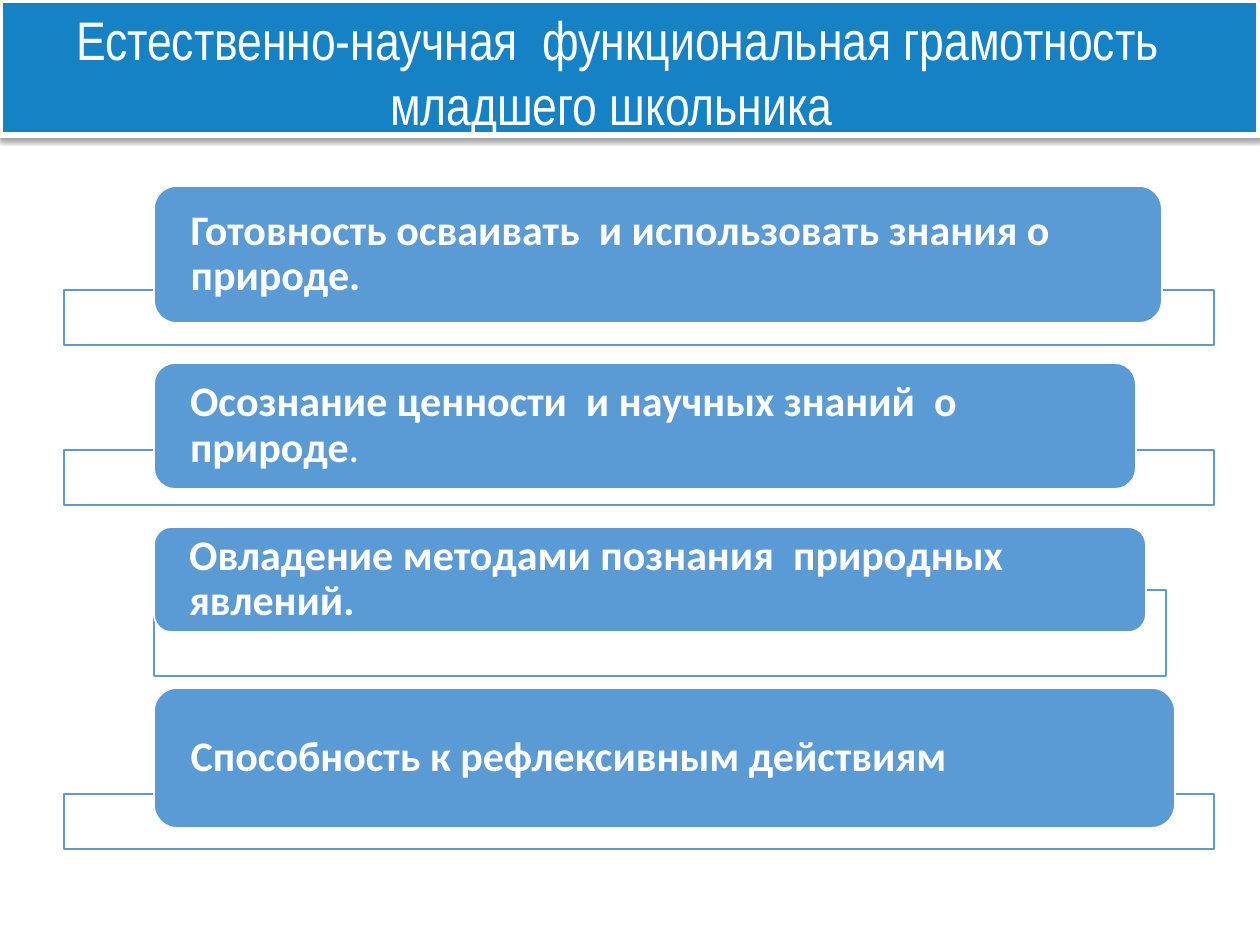
"""Build the slide on science literacy of primary school pupils."""
from lxml import etree
from pptx import Presentation
from pptx.dml.color import RGBColor
from pptx.enum.shapes import MSO_SHAPE as SHAPE
from pptx.enum.text import MSO_ANCHOR as ANCHOR, PP_ALIGN as ALIGN
from pptx.oxml import parse_xml
from pptx.oxml.ns import nsdecls, qn
from pptx.util import Pt

PX = 914400 / 126
WHITE = RGBColor(0xFF, 0xFF, 0xFF)
BANNER = RGBColor(0x16, 0x82, 0xC6)
BLUE = RGBColor(0x5B, 0x9B, 0xD5)


def px(*lengths):
    return [round(n * PX) for n in lengths]


def add_box(kind, box, fill, line, width):
    sp = s.shapes.add_shape(kind, *px(*box))
    sp.shadow.inherit = False
    sp.fill.solid()
    sp.fill.fore_color.rgb = fill
    sp.line.color.rgb = line
    sp.line.width = Pt(width)
    return sp


prs = Presentation()
prs.slide_width, prs.slide_height = px(1260, 945)
s = prs.slides.add_slide(prs.slide_layouts[5])

banner = add_box(SHAPE.RECTANGLE, (0, 0, 1259, 135), BANNER, WHITE, 3)
effects = banner._element.spPr.find(qn("a:effectLst"))
effects.append(parse_xml(
    f'<a:outerShdw {nsdecls("a")} blurRad="38100" dist="20320" dir="5400000" rotWithShape="0">'
    '<a:srgbClr val="000000"><a:alpha val="38000"/></a:srgbClr></a:outerShdw>'))

title = s.shapes.title
title._element.addprevious(banner._element)
title.left, title.top, title.width, title.height = px(0, 0, 1235, 147)
tf = title.text_frame
tf.word_wrap = True
tf.vertical_anchor = ANCHOR.TOP
p = tf.paragraphs[0]
p.alignment = ALIGN.CENTER
r = p.add_run()
r.text = "Естественно-научная  функциональная грамотность младшего школьника "
for name, value in {"name": "Arial Narrow", "size": Pt(31)}.items():
    setattr(r.font, name, value)
r.font.color.rgb = WHITE

frame = (64, 1150, 55)
rows = [
    (290, frame, (186, 1008, 137), [("Готовность осваивать  и использовать знания о природе.", True)]),
    (450, frame, (363, 982, 126), [("Осознание ценности  и научных знаний  о природе", True), (".", False)]),
    (590, (154, 1012, 86), (527, 992, 105), [("Овладение методами познания  природных явлений.", True)]),
    (794, frame, (688, 1021, 140), [("Способность к рефлексивным действиям", True)]),
]
for frame_top, (left, width, height), (top, label_width, label_height), runs in rows:
    back = add_box(SHAPE.RECTANGLE, (left, frame_top, width, height), WHITE, BLUE, 1)
    color = back._element.spPr.find(qn("a:solidFill"))[0]
    etree.SubElement(color, qn("a:alpha")).set("val", "90000")

    label = add_box(SHAPE.ROUNDED_RECTANGLE, (154, top, label_width, label_height), BLUE, WHITE, 1)
    tf = label.text_frame
    tf.word_wrap = True
    tf.vertical_anchor = ANCHOR.MIDDLE
    tf.margin_left, tf.margin_top, tf.margin_right, tf.margin_bottom = px(30, 0, 30, 0)
    p = tf.paragraphs[0]
    for name, value in {"alignment": ALIGN.LEFT, "line_spacing": 0.9, "space_after": Pt(8.4)}.items():
        setattr(p, name, value)
    for text, bold in runs:
        r = p.add_run()
        r.text = text
        for name, value in {"name": "Calibri", "size": Pt(24), "bold": bold}.items():
            setattr(r.font, name, value)
        r.font.color.rgb = WHITE

prs.save("out.pptx")
